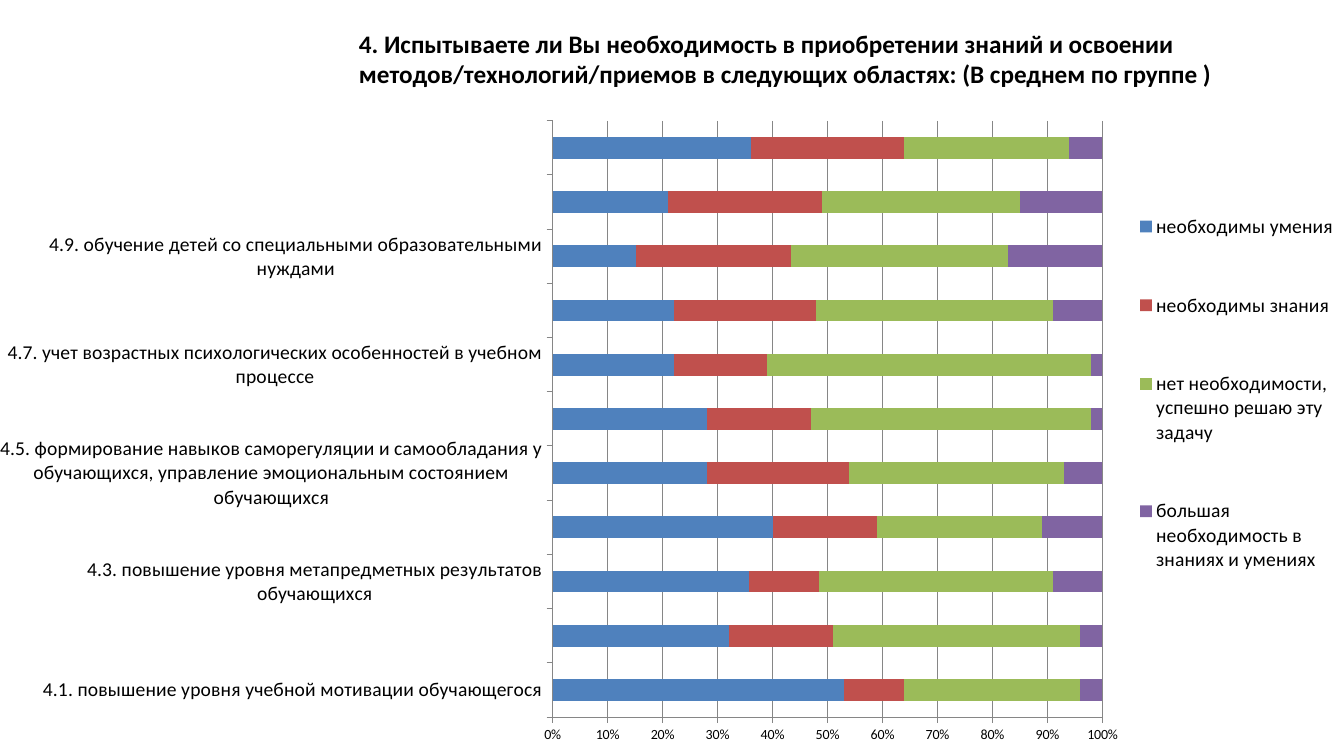
from dataclasses import dataclass

from pptx import Presentation
from pptx.chart.axis import _BaseAxis
from pptx.chart.chart import Chart
from pptx.chart.data import CategoryChartData
from pptx.dml.color import RGBColor
from pptx.enum.chart import XL_CHART_TYPE, XL_LEGEND_POSITION, XL_TICK_MARK
from pptx.enum.text import MSO_ANCHOR, MSO_AUTO_SIZE, PP_ALIGN
from pptx.oxml import parse_xml
from pptx.oxml.ns import nsdecls, qn
from pptx.slide import Slide
from pptx.util import Inches, Pt

BLACK = RGBColor(0x00, 0x00, 0x00)
GRAY = RGBColor(0x86, 0x86, 0x86)
BLUE = RGBColor(0x4F, 0x81, 0xBD)
RED = RGBColor(0xC0, 0x50, 0x4D)
GREEN = RGBColor(0x9B, 0xBB, 0x59)
PURPLE = RGBColor(0x80, 0x64, 0xA2)
FONT = "Calibri"
TITLE = (
    "4. Испытываете ли Вы необходимость в приобретении знаний и освоении "
    "методов/технологий/приемов в следующих областях: (В среднем по группе )"
)
ODD_AREAS = (
    "4.1. повышение уровня учебной мотивации обучающегося",
    "4.3. повышение уровня метапредметных результатов обучающихся",
    "4.5. формирование навыков саморегуляции и самообладания у обучающихся, "
    "управление эмоциональным состоянием обучающихся",
    "4.7. учет возрастных психологических особенностей в учебном процессе",
    "4.9. обучение детей со специальными образовательными нуждами",
)


@dataclass(frozen=True)
class Answer:
    name: str
    values: tuple[int, ...]
    color: RGBColor


@dataclass(frozen=True)
class Frame:
    x: float
    y: float
    w: float
    h: float


ANSWERS = (
    Answer("необходимы умения", (53, 32, 36, 40, 28, 28, 22, 22, 15, 21, 36), BLUE),
    Answer("необходимы знания", (11, 19, 13, 19, 26, 19, 17, 26, 28, 28, 28), RED),
    Answer(
        "нет необходимости, успешно решаю эту задачу",
        (32, 45, 43, 30, 39, 51, 59, 43, 39, 36, 30),
        GREEN,
    ),
    Answer(
        "большая необходимость в знаниях и умениях",
        (4, 4, 9, 11, 7, 2, 2, 9, 17, 15, 6),
        PURPLE,
    ),
)


def place_part(part, position: int, frame: Frame, inner: bool = False) -> None:
    for old in part.findall(qn("c:layout")):
        part.remove(old)
    target = '<c:layoutTarget val="inner"/>' if inner else ""
    modes = "".join(f'<c:{side}Mode val="edge"/>' for side in "xy")
    sizes = "".join(f'<c:{key} val="{getattr(frame, key)}"/>' for key in "xywh")
    part.insert(
        position,
        parse_xml(
            f"<c:layout {nsdecls('c')}><c:manualLayout>{target}{modes}{sizes}"
            "</c:manualLayout></c:layout>"
        ),
    )


def style_axis(axis: _BaseAxis, size: int) -> None:
    axis.major_tick_mark = XL_TICK_MARK.OUTSIDE
    axis.minor_tick_mark = XL_TICK_MARK.NONE
    axis.format.line.color.rgb = GRAY
    axis.tick_labels.font.size = Pt(size)


def add_title(page: Slide) -> None:
    title = page.shapes.title
    title.left, title.top = Inches(3.46), Inches(0.23)
    title.width, title.height = Inches(8.98), Inches(1.04)
    frame = title.text_frame
    frame.text = TITLE
    frame.word_wrap = True
    frame.auto_size = MSO_AUTO_SIZE.SHAPE_TO_FIT_TEXT
    frame.vertical_anchor = MSO_ANCHOR.TOP
    para = frame.paragraphs[0]
    para.alignment = PP_ALIGN.LEFT
    para.font.name = FONT
    para.font.size = Pt(18)
    para.font.bold = True
    para.font.color.rgb = BLACK


def add_answers_chart(page: Slide) -> Chart:
    areas = [""] * len(ANSWERS[0].values)
    areas[: 2 * len(ODD_AREAS) : 2] = ODD_AREAS
    data = CategoryChartData()
    data.categories = areas
    for answer in ANSWERS:
        data.add_series(answer.name, answer.values)
    chart = page.shapes.add_chart(
        XL_CHART_TYPE.BAR_STACKED_100,
        Inches(0), Inches(1.07), Inches(13.33), Inches(6.43),
        data,
    ).chart
    chart.has_title = False
    chart.font.name = FONT
    chart.font.size = Pt(10)
    chart.font.color.rgb = BLACK

    plot = chart.plots[0]
    plot.gap_width = 150
    plot.overlap = 100
    plot.vary_by_categories = False
    for series, answer in zip(plot.series, ANSWERS):
        series.format.fill.solid()
        series.format.fill.fore_color.rgb = answer.color

    style_axis(chart.category_axis, 14)
    style_axis(chart.value_axis, 10)
    chart.value_axis.major_unit = 0.1
    chart.value_axis.has_major_gridlines = True
    chart.value_axis.major_gridlines.format.line.color.rgb = GRAY
    chart.value_axis.tick_labels.number_format = "0%"
    chart.value_axis.tick_labels.number_format_is_linked = False

    chart.has_legend = True
    chart.legend.position = XL_LEGEND_POSITION.RIGHT
    chart.legend.include_in_layout = False
    chart.legend.font.size = Pt(14)
    place_part(chart.legend._element, 1, Frame(0.84, 0.08, 0.16, 0.72))
    plot_area = chart._chartSpace.chart.plotArea
    place_part(plot_area, 0, Frame(0.41, 0.02, 0.41, 0.92), inner=True)
    return chart


def main() -> None:
    deck = Presentation()
    deck.slide_width, deck.slide_height = Inches(13.33), Inches(7.5)
    page = deck.slides.add_slide(deck.slide_layouts[5])
    add_title(page)
    add_answers_chart(page)
    deck.save("out.pptx")


if __name__ == "__main__":
    main()
